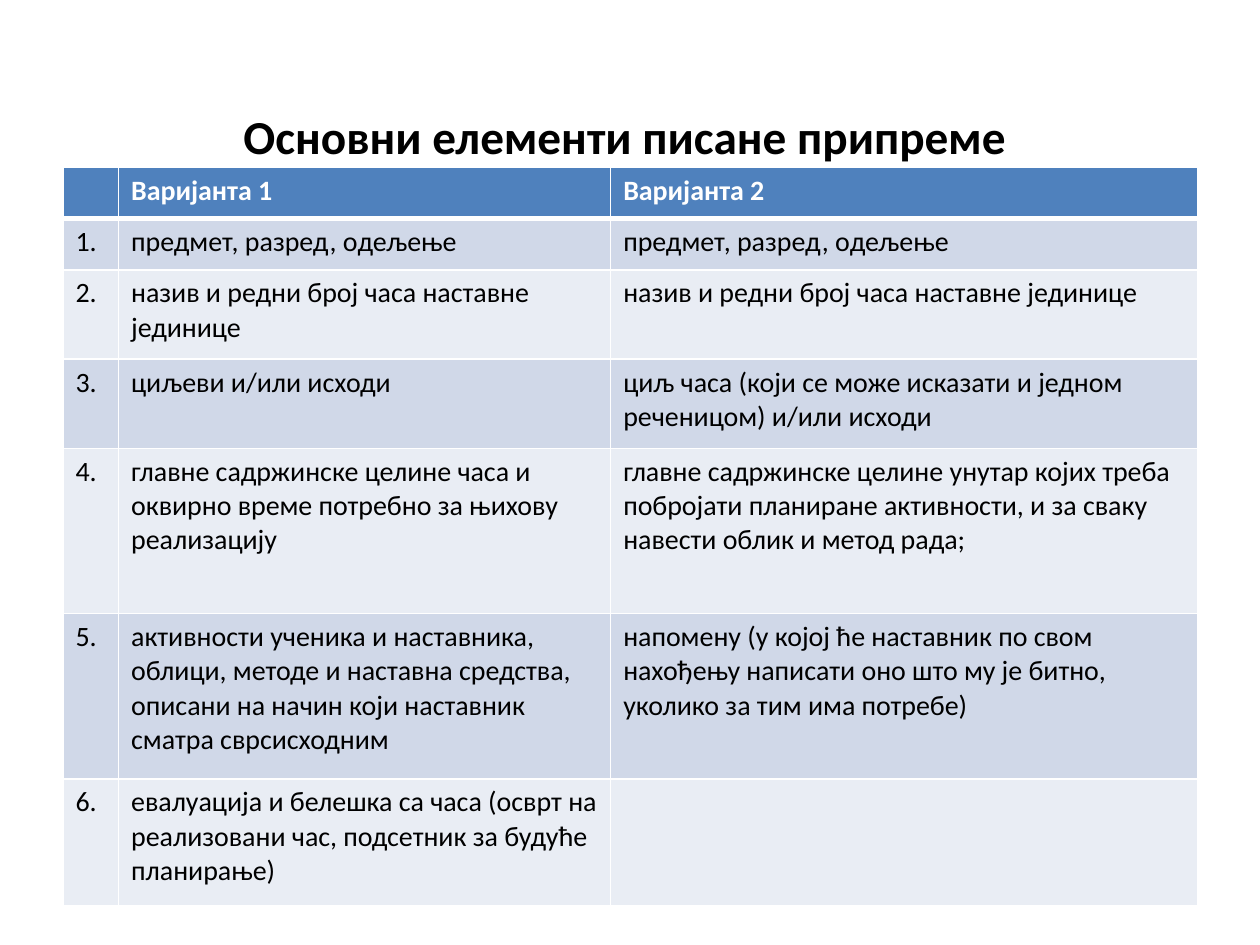
"""Builds a slide that compares two variants of a written lesson plan in a table."""
import lxml.etree
import pptx
import pptx.dml.color
import pptx.enum.text
import pptx.oxml.ns
import pptx.util

Cm = pptx.util.Cm
Pt = pptx.util.Pt
RGBColor = pptx.dml.color.RGBColor
PP_ALIGN = pptx.enum.text.PP_ALIGN
MSO_ANCHOR = pptx.enum.text.MSO_ANCHOR
qn = pptx.oxml.ns.qn

BLACK = RGBColor(0x00, 0x00, 0x00)
WHITE = RGBColor(0xFF, 0xFF, 0xFF)
HEADER_BLUE = RGBColor(0x4F, 0x81, 0xBD)
BAND_DARK = RGBColor(0xD0, 0xD8, 0xE8)
BAND_LIGHT = RGBColor(0xE9, 0xED, 0xF4)

HEADING = "Основни елементи писане припреме "
VARIANTS = ["", "Варијанта 1", "Варијанта 2"]
ELEMENTS = [
    ("предмет, разред, oдељење", "предмет, разред, oдељење"),
    ("назив и редни број часа наставне јединице",
     "назив и редни број часа наставне јединице"),
    ("циљеви и/или исходи",
     "циљ часа (који се може исказати и једном реченицом) и/или исходи"),
    ("главне садржинске целине часа и оквирно време потребно за њихову реализацију",
     "главне садржинске целине унутар којих треба побројати планиране активности, "
     "и за сваку навести облик и метод рада;"),
    ("активности ученика и наставника, облици, методе и наставна средства, "
     "описани на начин који наставник сматра сврсисходним",
     "напомену (у којој ће наставник по свом нахођењу написати оно што му је битно, "
     "уколико за тим има потребе)"),
    ("евалуација и белешка са часа (осврт на реализовани час, "
     "подсетник за будуће планирање)", ""),
]
COLUMN_WIDTHS = [1.12, 9.92, 11.83]
ROW_HEIGHTS = [1.03, 1.03, 1.8, 1.8, 3.33, 3.33, 2.56]


def write(frame, text, size=16, color=BLACK, bold=False, align=PP_ALIGN.LEFT,
          font="Calibri"):
    """Put one formatted paragraph into a text frame."""
    paragraph = frame.paragraphs[0]
    paragraph.alignment = align
    run = paragraph.add_run()
    run.text = text
    run.font.name = font
    run.font.size = Pt(size)
    run.font.bold = bold
    run.font.color.rgb = color


class LessonSlide:
    """Holds the style and the current slide."""

    def __init__(self, slide, border=WHITE, header=HEADER_BLUE,
                 bands=(BAND_DARK, BAND_LIGHT)):
        self.slide = slide
        self.border = border
        self.header = header
        self.bands = bands

    def heading(self, text, left, top, width, height):
        """Add the centred heading."""
        box = self.slide.shapes.add_textbox(Cm(left), Cm(top), Cm(width), Cm(height))
        frame = box.text_frame
        frame.word_wrap = True
        frame.vertical_anchor = MSO_ANCHOR.MIDDLE
        write(frame, text, size=27, bold=True, align=PP_ALIGN.CENTER)

    def outline(self, cell, **widths):
        """Draw the four borders of a cell, with widths in points."""
        properties = cell._tc.get_or_add_tcPr()
        for side in "LRTB":
            line = lxml.etree.SubElement(properties, qn(f"a:ln{side}"),
                                         w=str(Pt(widths.get(side, 1))))
            fill = lxml.etree.SubElement(line, qn("a:solidFill"))
            lxml.etree.SubElement(fill, qn("a:srgbClr"), val=str(self.border))

    def table(self, rows, left, top, widths, heights):
        """Add a banded table whose first row is the header."""
        grid = self.slide.shapes.add_table(
            len(rows), len(widths), Cm(left), Cm(top),
            Cm(sum(widths)), Cm(sum(heights))).table
        for column, width in zip(grid.columns, widths):
            column.width = Cm(width)
        for index, (row, height, texts) in enumerate(zip(grid.rows, heights, rows)):
            row.height = Cm(height)
            is_header = index == 0
            edges = {"B": 3} if is_header else {"T": 3} if index == 1 else {}
            for cell, text in zip(row.cells, texts):
                self.outline(cell, **edges)
                cell.fill.solid()
                cell.fill.fore_color.rgb = (
                    self.header if is_header else self.bands[(index - 1) % 2])
                write(cell.text_frame, text, bold=is_header,
                      color=WHITE if is_header else BLACK)


def main():
    """Build and save the presentation."""
    deck = pptx.Presentation()
    deck.slide_width, deck.slide_height = Cm(25.4), Cm(19.05)
    lesson = LessonSlide(deck.slides.add_slide(deck.slide_layouts[6]))
    lesson.heading(HEADING, 1.27, 0.76, 22.86, 3.94)
    numbered = [(f"{number}.", *pair) for number, pair in enumerate(ELEMENTS, 1)]
    lesson.table([VARIANTS, *numbered], 1.27, 3.38, COLUMN_WIDTHS, ROW_HEIGHTS)
    deck.save("out.pptx")


if __name__ == "__main__":
    main()
